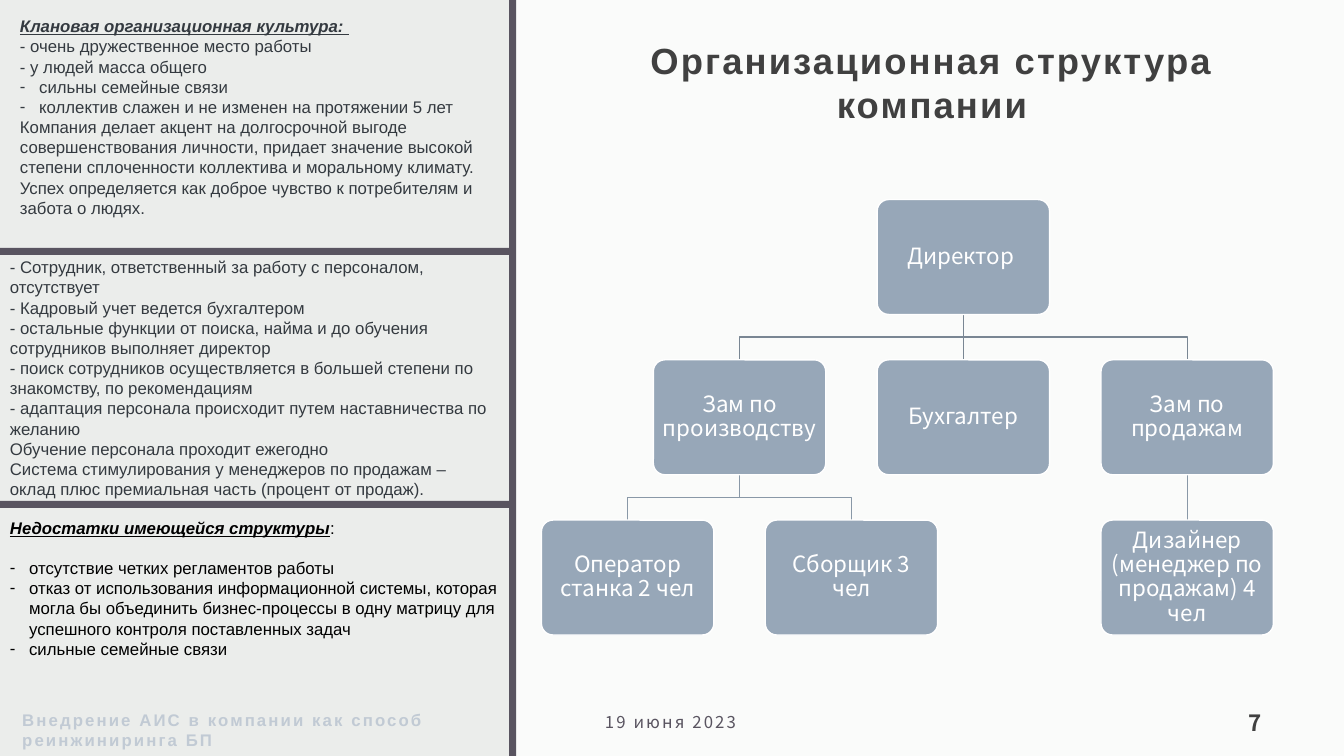
from pptx import Presentation
from pptx.dml.color import RGBColor
from pptx.enum.shapes import MSO_CONNECTOR, MSO_SHAPE
from pptx.enum.text import MSO_ANCHOR, PP_ALIGN
from pptx.oxml.ns import qn
from pptx.util import Inches, Pt
from lxml.etree import SubElement

BACK, PANEL, BAR = "EBEDEB", "FAFBFA", "595460"
BOX, WHITE, DARK, GREY = "97A7B8", "FFFFFF", "404040", "343A40"
SANS, NOTO = "Arial", "Noto Sans CJK JP"
BOX_W, BOX_H = 1.71, 1.14
LEFT, TOP, COL, ROW = 5.37, 1.98, 1.11, 1.59

CULTURE = [
    "- очень дружественное место работы",
    "- у людей масса общего",
    "•сильны семейные связи",
    "•коллектив слажен и не изменен на протяжении 5 лет",
    "Компания делает акцент на долгосрочной выгоде совершенствования личности, "
    "придает значение высокой степени сплоченности коллектива и моральному климату. "
    "Успех определяется как доброе чувство к потребителям и забота о людях.",
]
STAFF = [
    "- Сотрудник, ответственный за работу с персоналом, отсутствует",
    "- Кадровый учет ведется бухгалтером",
    "- остальные функции от поиска, найма и до обучения сотрудников выполняет директор",
    "- поиск сотрудников осуществляется в большей степени по знакомству, по рекомендациям",
    "- адаптация персонала происходит путем наставничества по желанию",
    "Обучение персонала проходит ежегодно",
    "Система стимулирования у менеджеров по продажам – оклад плюс премиальная часть "
    "(процент от продаж).",
]
FLAWS = [
    "•отсутствие четких регламентов работы",
    "•отказ от использования информационной системы, которая могла бы объединить "
    "бизнес-процессы в одну матрицу для успешного контроля поставленных задач",
    "•сильные семейные связи",
]
# name: (column, row, parent)
CHART = {
    "Директор ": (3, 0, None),
    "Зам по производству": (1, 1, "Директор "),
    "Бухгалтер": (3, 1, "Директор "),
    "Зам по продажам": (5, 1, "Директор "),
    "Оператор станка 2 чел": (0, 2, "Зам по производству"),
    "Сборщик 3 чел": (2, 2, "Зам по производству"),
    "Дизайнер (менеджер по продажам) 4 чел": (5, 2, "Зам по продажам"),
}


def color(code):
    return RGBColor.from_string(code)


class Page:
    def __init__(self, deck):
        self.slide = deck.slides.add_slide(deck.slide_layouts[6])
        self.shapes = self.slide.shapes
        fill = self.slide.background.fill
        fill.solid()
        fill.fore_color.rgb = color(BACK)

    def style(self, para, size, face, tint, bold=False, space=0):
        font = para.font
        font.size, font.name, font.bold = Pt(size), face, bold
        font.color.rgb = color(tint)
        if space:
            font._rPr.set("spc", str(int(space * 100)))

    def rect(self, x, y, w, h, tint, kind=MSO_SHAPE.RECTANGLE):
        shape = self.shapes.add_shape(kind, Inches(x), Inches(y), Inches(w), Inches(h))
        shape.shadow.inherit = False
        shape.fill.solid()
        shape.fill.fore_color.rgb = color(tint)
        shape.line.fill.background()
        return shape

    def frame(self, x, y, w, h):
        frame = self.shapes.add_textbox(Inches(x), Inches(y), Inches(w), Inches(h)).text_frame
        frame.word_wrap = True
        return frame

    def label(self, at, text, size, face, tint, bold=True,
              align=PP_ALIGN.LEFT, anchor=MSO_ANCHOR.MIDDLE):
        """Add one spaced-out line of text: title, footer, date or number."""
        frame = self.frame(*at)
        frame.margin_left = frame.margin_right = frame.margin_top = Inches(0.12)
        frame.margin_bottom = Inches(0.1)
        frame.vertical_anchor = anchor
        para = frame.paragraphs[0]
        para.text, para.alignment = text, align
        self.style(para, size, face, tint, bold, 1.5)

    def notes(self, at, lines, tint, head="", tail="", gap=0):
        """Add a text block; a line that starts with • gets a dash bullet."""
        frame = self.frame(*at)
        para = frame.paragraphs[0]
        if head:
            run = para.add_run()
            run.text = head
            run.font.bold = run.font.italic = run.font.underline = True
            if tail:
                para.add_run().text = tail
            self.style(para, 12, SANS, tint)
            para.space_after = Pt(gap)
            para = frame.add_paragraph()
        for i, line in enumerate(lines):
            if i:
                para = frame.add_paragraph()
            para.text = line.lstrip("•")
            if line.startswith("•"):
                props = para._p.get_or_add_pPr()
                props.set("marL", str(Inches(0.19)))
                props.set("indent", str(-Inches(0.19)))
                SubElement(props, qn("a:buFont")).set("typeface", SANS)
                SubElement(props, qn("a:buChar")).set("char", "-")
            self.style(para, 12, SANS, tint)

    def node(self, text, x, y):
        shape = self.rect(x, y, BOX_W, BOX_H, BOX, MSO_SHAPE.ROUNDED_RECTANGLE)
        shape.adjustments[0] = 0.1
        shape.line.color.rgb = color(WHITE)
        shape.line.width = Pt(1)
        frame = shape.text_frame
        frame.word_wrap = True
        frame.vertical_anchor = MSO_ANCHOR.MIDDLE
        frame.margin_left = frame.margin_right = Inches(0.03)
        frame.margin_top = frame.margin_bottom = Inches(0.03)
        para = frame.paragraphs[0]
        para.text, para.alignment, para.line_spacing = text, PP_ALIGN.CENTER, 0.9
        self.style(para, 16, NOTO, WHITE)

    def link(self, x1, y1, x2, y2, tint):
        """Join two boxes, by a straight line or with a step halfway."""
        ends = [Inches(v) for v in (x1, y1, x2, y2)]
        if x1 == x2:
            line = self.shapes.add_connector(MSO_CONNECTOR.STRAIGHT, *ends)
            SubElement(line._element.spPr, qn("a:effectLst"))
        else:
            a, b, c, d = ends
            mid = (b + d) // 2
            route = self.shapes.build_freeform(a, b)
            route.add_line_segments([(a, mid), (c, mid), (c, d)], close=False)
            line = route.convert_to_shape()
            line.fill.background()
            line.shadow.inherit = False
        line.line.color.rgb = color(tint)
        line.line.width = Pt(1)


def spot(name):
    col, row, _ = CHART[name]
    return LEFT + col * COL, TOP + row * ROW


def main():
    deck = Presentation()
    deck.slide_width, deck.slide_height = Inches(13.33), Inches(7.5)
    page = Page(deck)
    page.rect(5.12, 0, 8.21, 7.5, PANEL)
    page.rect(5.05, 0, 0.07, 7.5, BAR)
    for y in (2.46, 4.97):
        page.rect(0, y, 5.05, 0.07, BAR)

    page.label((5.36, 0.24, 7.77, 1.13), "Организационная структура компании",
               26, SANS, DARK, align=PP_ALIGN.CENTER)
    page.label((0.1, 7.06, 4.71, 0.34), "Внедрение АИС в компании как способ реинжиниринга БП",
               12, SANS, "C1CAD4")
    page.label((5.88, 6.9, 3.73, 0.5), "19 июня 2023", 12, NOTO, BAR, bold=False)
    page.label((11.56, 6.9, 1.07, 0.5), "7", 16, NOTO, DARK,
               align=PP_ALIGN.RIGHT, anchor=MSO_ANCHOR.BOTTOM)

    for name, (_, row, boss) in CHART.items():
        x, y = spot(name)
        if boss:
            px, py = spot(boss)
            half = BOX_W / 2
            page.link(px + half, py + BOX_H, x + half, y, "798693" if row == 1 else "8998A7")
    for name in CHART:
        page.node(name, *spot(name))

    page.notes((0.1, 0.11, 4.86, 2.12), CULTURE, GREY, "Клановая организационная культура: ")
    page.notes((0, 2.5, 4.96, 2.52), STAFF, GREY)
    page.notes((0, 5.09, 5.05, 1.51), FLAWS, "000000",
               "Недостатки имеющейся структуры", ":", 14)
    deck.save("out.pptx")


if __name__ == "__main__":
    main()
